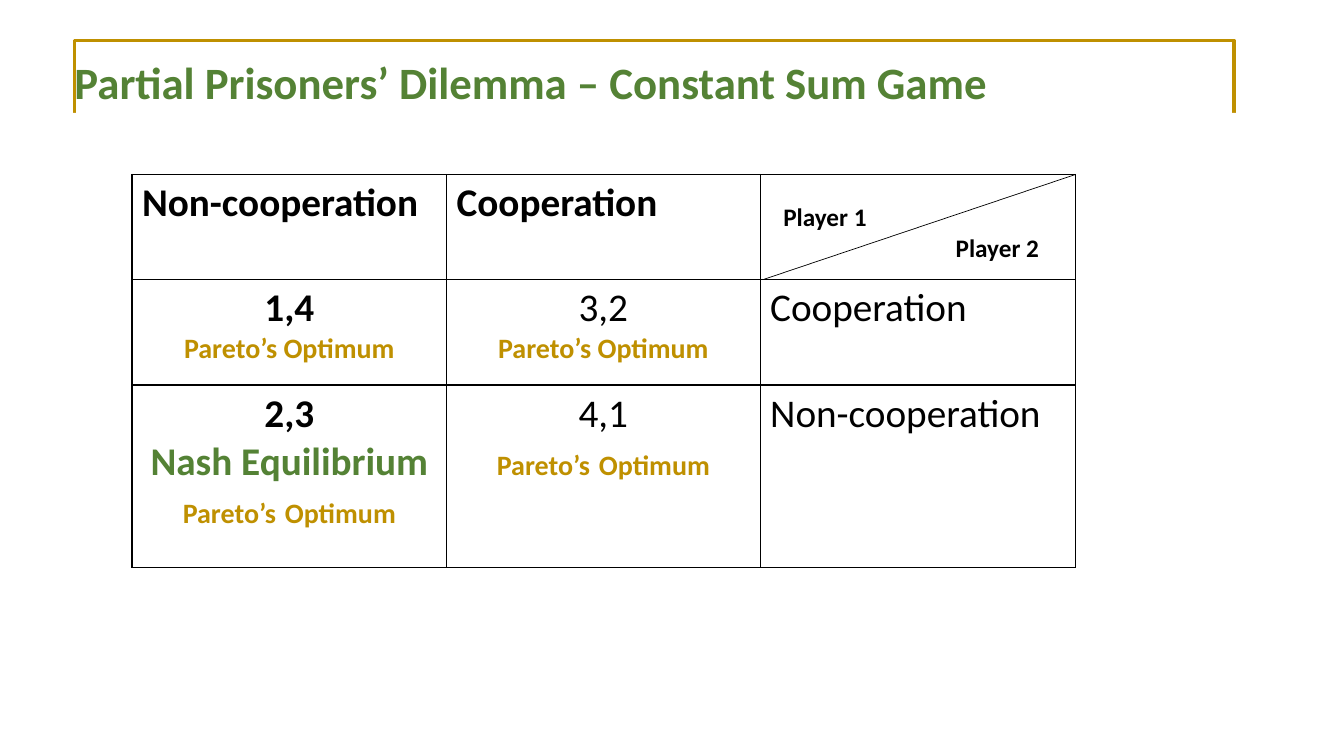
from dataclasses import dataclass

from lxml import etree
from pptx import Presentation
from pptx import util as u
from pptx.dml.color import RGBColor
from pptx.enum import shapes, text
from pptx.oxml import ns


@dataclass(frozen=True)
class Theme:
    font: str = "Calibri"
    black: str = "000000"
    white: str = "FFFFFF"
    gold: str = "BF9000"
    green: str = "548235"
    title_size: int = 32
    body_size: int = 28
    note_size: int = 20
    label_size: int = 18


THEME = Theme()


def add_span(para, wording, size=THEME.body_size, color=THEME.black, bold=False):
    span = para.add_run()
    span.text = wording
    span.font.name = THEME.font
    span.font.size = u.Pt(size)
    span.font.bold = bold
    span.font.color.rgb = RGBColor.from_string(color)


def add_label(page, wording, left, top, width, height, size, color):
    box = page.shapes.add_textbox(*map(u.Inches, (left, top, width, height)))
    frame = box.text_frame
    frame.word_wrap = True
    add_span(frame.paragraphs[0], wording, size, color, True)
    return frame


def add_rectangle(page, left, top, width, height):
    box = page.shapes.add_shape(
        shapes.MSO_SHAPE.RECTANGLE, *map(u.Inches, (left, top, width, height)))
    box.shadow.inherit = False
    box.fill.background()
    box.line.fill.background()
    return box


def add_title(page, left, top, width, height):
    """Title in a gold frame whose lower part is masked in white."""
    frame = add_rectangle(page, left + 0.1, top + 0.07, width, 1.26)
    frame.line.color.rgb = RGBColor.from_string(THEME.gold)
    frame.line.width = u.Pt(2.25)
    title = add_label(page, "Partial Prisoners’ Dilemma – Constant Sum Game",
                      left, top, width, height, THEME.title_size, THEME.green)
    title.vertical_anchor = text.MSO_ANCHOR.MIDDLE
    title.paragraphs[0].line_spacing = 0.9
    mask = add_rectangle(page, left, top + 0.79, width + 0.27, 0.61)
    mask.fill.solid()
    mask.fill.fore_color.rgb = RGBColor.from_string(THEME.white)


def style_cell(cell):
    properties = cell._tc.get_or_add_tcPr()
    for side in ("a:lnL", "a:lnR", "a:lnT", "a:lnB"):
        border = etree.SubElement(properties, ns.qn(side), w=str(u.Pt(1)))
        fill = etree.SubElement(border, ns.qn("a:solidFill"))
        etree.SubElement(fill, ns.qn("a:srgbClr"), val=THEME.black)
    cell.fill.background()


def add_pareto(para, space_size):
    note = dict(color=THEME.gold, bold=True)
    add_span(para, "Pareto’s", THEME.note_size, **note)
    add_span(para, " ", space_size, **note)
    add_span(para, "Optimum", THEME.note_size, **note)


def fill_payoff(cell, payoff, bold, space_size, nash=False):
    frame = cell.text_frame
    add_span(frame.paragraphs[0], payoff, bold=bold)
    if nash:
        add_span(frame.add_paragraph(), "Nash Equilibrium", color=THEME.green, bold=True)
    add_pareto(frame.add_paragraph(), space_size)
    for para in frame.paragraphs:
        para.alignment = text.PP_ALIGN.CENTER


def add_payoff_table(page, left, top, widths, heights):
    holder = page.shapes.add_table(
        len(heights), len(widths),
        *map(u.Inches, (left, top, sum(widths), sum(heights))))
    table = holder.table
    table.first_row = table.horz_banding = False
    for column, width in zip(table.columns, widths):
        column.width = u.Inches(width)
    for row, height in zip(table.rows, heights):
        row.height = u.Inches(height)
    for cell in table.iter_cells():
        style_cell(cell)

    for column, choice in enumerate(("Non-cooperation", "Cooperation")):
        add_span(table.cell(0, column).text_frame.paragraphs[0], choice, bold=True)
    payoffs = (
        ("Cooperation", "1,4", "3,2", THEME.note_size),
        ("Non-cooperation", "2,3", "4,1", THEME.body_size),
    )
    for row, (choice, first, second, space_size) in enumerate(payoffs, 1):
        fill_payoff(table.cell(row, 0), first, True, space_size, nash=first == "2,3")
        fill_payoff(table.cell(row, 1), second, False, space_size)
        add_span(table.cell(row, 2).text_frame.paragraphs[0], choice)


def add_player_corner(page, left, top, width, height):
    """Diagonal across the corner cell with a player on each side."""
    diagonal = page.shapes.add_connector(
        shapes.MSO_CONNECTOR.STRAIGHT,
        *map(u.Inches, (left + width, top, left + 0.04, top + height)))
    diagonal.line.color.rgb = RGBColor.from_string(THEME.black)
    diagonal.line.width = u.Pt(0.5)
    etree.SubElement(diagonal._element.spPr, ns.qn("a:effectLst"))
    for player, across, down in (("Player 2", 1.84, 0.53), ("Player 1", 0.13, 0.22)):
        add_label(page, player, left + across, top + down, 1.29, 0.4,
                  THEME.label_size, THEME.black)


def main():
    deck = Presentation()
    deck.slide_width, deck.slide_height = u.Inches(13.33), u.Inches(7.5)
    page = deck.slides.add_slide(deck.slide_layouts[6])
    add_title(page, 0.64, 0.33, 11.5, 1.03)
    left, top = 1.31, 1.73
    widths, heights = (3.12, 3.11, 3.13), (1.04, 1.05, 1.81)
    add_payoff_table(page, left, top, widths, heights)
    add_player_corner(page, left + sum(widths[:2]), top, widths[2], heights[0])
    deck.save("out.pptx")


if __name__ == "__main__":
    main()
